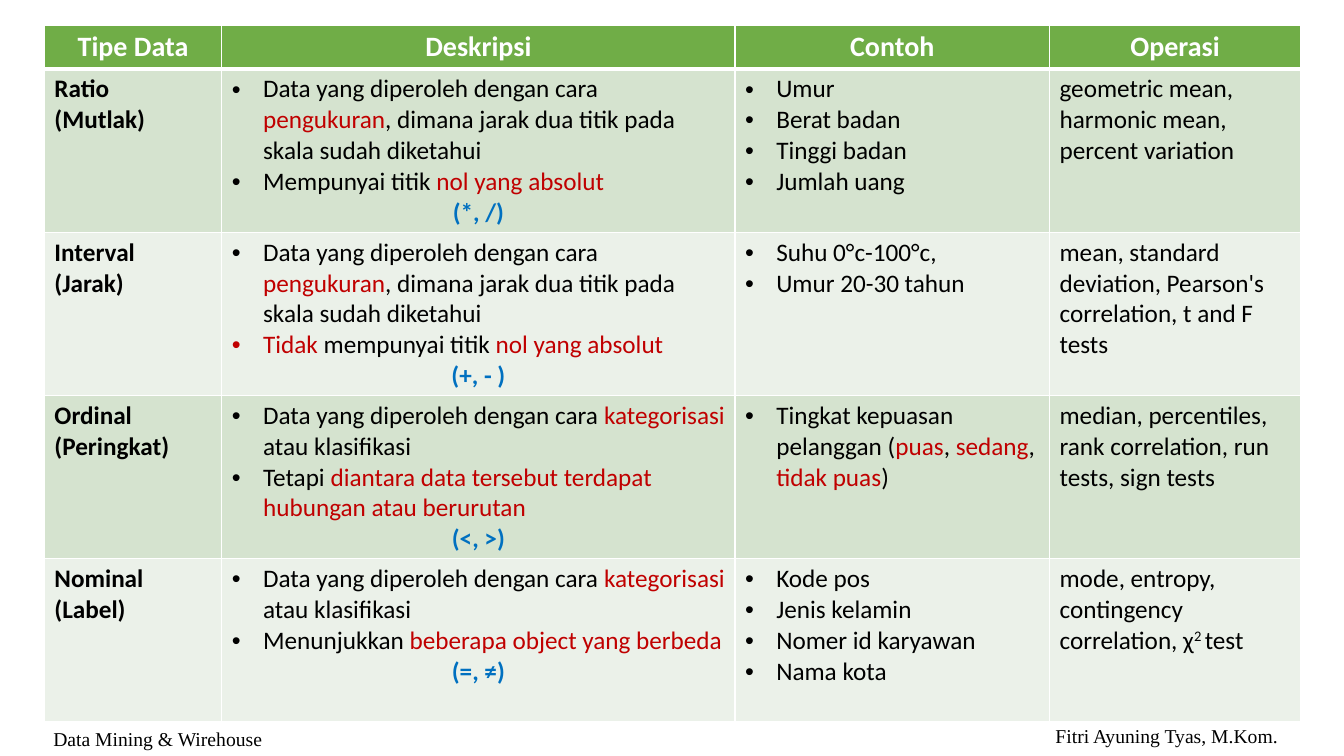
from dataclasses import dataclass
from lxml.etree import SubElement
from pptx import Presentation
from pptx.dml.color import RGBColor as Rgb
from pptx.enum.text import PP_ALIGN as Align
from pptx.oxml import parse_xml
from pptx.oxml.ns import nsdecls, qn
from pptx.util import Inches, Pt


@dataclass(frozen=True)
class Theme:
    body: str = "Calibri"
    serif: str = "Times New Roman"
    head: int = 20
    text: int = 18
    foot: int = 14
    black: str = "000000"
    white: str = "FFFFFF"
    red: str = "C00000"
    blue: str = "0070C0"
    green: str = "70AD47"
    bands: tuple = ("D5E3CF", "EBF1E9")


THEME = Theme()
HEADS = ["Tipe Data", "Deskripsi", "Contoh", "Operasi"]
WIDTHS = [1.76, 5.09, 3.12, 2.49]
HEAD_H, ROW_H, INDENT = 0.43, 1.62, 0.31

# Bars set off the marked part of a line
MEASURED = ("Data yang diperoleh dengan cara |pengukuran|, "
            "dimana jarak dua titik pada skala sudah diketahui")
SORTED = "Data yang diperoleh dengan cara |kategorisasi |atau klasifikasi"

# Name, description, operators, examples, operations
ROWS = [
    (["Ratio", "(Mutlak)"],
     [MEASURED, "Mempunyai titik |nol yang absolut"], "(*, /)",
     ["Umur", "Berat badan", "Tinggi badan", "Jumlah uang"],
     "geometric mean, harmonic mean, percent variation"),
    (["Interval", "(Jarak)"],
     [MEASURED, "|Tidak |mempunyai titik |nol yang absolut"], "(+, - )",
     ["Suhu 0°c-100°c,", "Umur 20-30 tahun"],
     "mean, standard deviation, Pearson's correlation, t and F tests"),
    (["Ordinal", "(Peringkat)"],
     [SORTED, "Tetapi |diantara data tersebut terdapat hubungan atau berurutan"],
     "(<, >)",
     ["Tingkat kepuasan pelanggan (|puas|, |sedang|, |tidak puas|)"],
     "median, percentiles, rank correlation, run tests, sign tests"),
    (["Nominal", "(Label)"],
     [SORTED, "Menunjukkan |beberapa object yang berbeda"], "(=, ≠)",
     ["Kode pos", "Jenis kelamin", "Nomer id karyawan", "Nama kota"],
     "mode, entropy, contingency correlation, χ|2 |test"),
]


def write(frame, lines, size=THEME.text, font=THEME.body, color=THEME.black,
          bold=False, align=Align.LEFT, bullet=False, raised=False):
    """Append lines; marked parts turn red, or superscript when raised."""
    for line in lines:
        para = frame.add_paragraph() if frame.text else frame.paragraphs[0]
        para.alignment = align
        if bullet:
            props = para._p.get_or_add_pPr()
            props.set("marL", str(Inches(INDENT)))
            props.set("indent", str(-Inches(INDENT)))
            SubElement(props, qn("a:buFont"), typeface="Arial")
            SubElement(props, qn("a:buChar"), char="•")
        for i, part in enumerate(line.split("|")):
            if not part:
                continue
            marked = i % 2 == 1
            run = para.add_run()
            run.text = part
            run.font.size, run.font.name, run.font.bold = Pt(size), font, bold
            tint = THEME.red if marked and not raised else color
            run.font.color.rgb = Rgb.from_string(tint)
            if marked and raised:
                run.font._element.set("baseline", "30000")


def paint(cell, fill, top=1, base=1):
    """Fill a cell and rule its four sides in white."""
    cell.fill.solid()
    cell.fill.fore_color.rgb = Rgb.from_string(fill)
    props = cell._tc.get_or_add_tcPr()
    for i, (side, width) in enumerate(zip("LRTB", (1, 1, top, base))):
        props.insert(i, parse_xml(
            f'<a:ln{side} {nsdecls("a")} w="{Pt(width)}"><a:solidFill>'
            f'<a:srgbClr val="{THEME.white}"/></a:solidFill></a:ln{side}>'))


def add_grid(slide, left, top):
    """Table of data types."""
    grid = slide.shapes.add_table(
        len(ROWS) + 1, len(HEADS), Inches(left), Inches(top),
        Inches(sum(WIDTHS)), Inches(HEAD_H + ROW_H * len(ROWS))).table
    for col, width in zip(grid.columns, WIDTHS):
        col.width = Inches(width)
    for i, row in enumerate(grid.rows):
        row.height = Inches(ROW_H if i else HEAD_H)

    # Header
    for cell, head in zip(grid.rows[0].cells, HEADS):
        paint(cell, THEME.green, base=3)
        write(cell.text_frame, [head], size=THEME.head, color=THEME.white,
              bold=True, align=Align.CENTER)

    # Body
    for i, (name, about, signs, samples, tests) in enumerate(ROWS):
        cells = list(grid.rows[i + 1].cells)
        for cell in cells:
            paint(cell, THEME.bands[i % 2], top=1 if i else 3)
        kind, desc, case, ops = [cell.text_frame for cell in cells]
        write(kind, name, bold=True)
        write(desc, about, bullet=True)
        write(desc, [signs], color=THEME.blue, bold=True, align=Align.CENTER)
        write(case, samples, bullet=True)
        write(ops, [tests], raised=True)


def add_foot(slide, text, left, top, width=2.49, height=0.34):
    """One footer note."""
    box = slide.shapes.add_textbox(
        Inches(left), Inches(top), Inches(width), Inches(height))
    box.text_frame.word_wrap = True
    write(box.text_frame, [text], size=THEME.foot, font=THEME.serif)


def main():
    deck = Presentation()
    deck.slide_width, deck.slide_height = Inches(13.33), Inches(7.5)
    slide = deck.slides.add_slide(deck.slide_layouts[6])
    add_foot(slide, "Fitri Ayuning Tyas, M.Kom.", 10.37, 7.13)
    add_foot(slide, "Data Mining & Wirehouse", 0.43, 7.16)
    add_grid(slide, 0.44, 0.25)
    deck.save("out.pptx")


if __name__ == "__main__":
    main()
